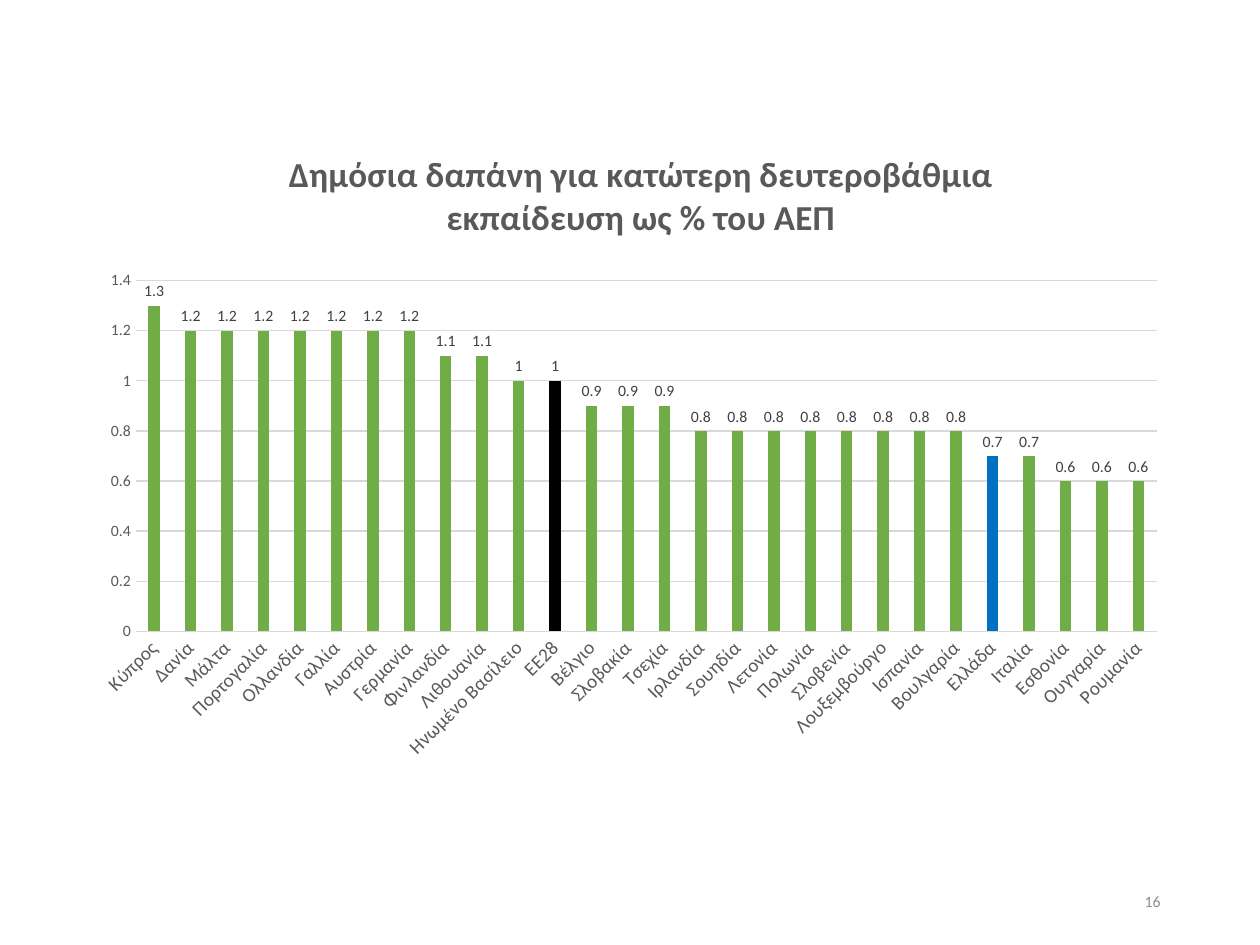
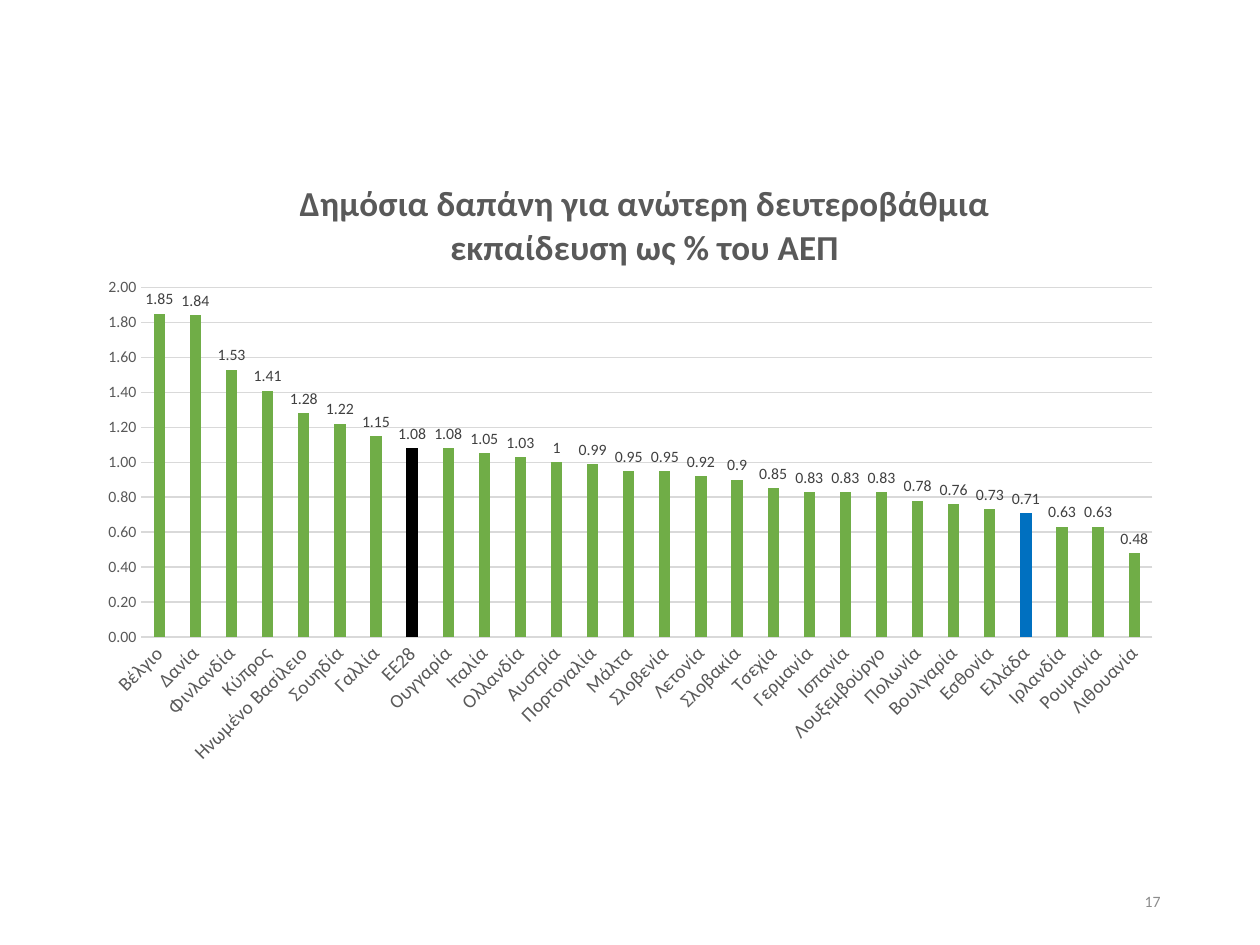
from lxml.etree import SubElement
from pptx import Presentation
from pptx.chart.data import CategoryChartData
from pptx.dml.color import RGBColor
from pptx.enum.chart import XL_CHART_TYPE, XL_LABEL_POSITION, XL_TICK_MARK
from pptx.enum.text import MSO_ANCHOR, PP_ALIGN
from pptx.oxml.ns import qn
from pptx.util import Pt

EMU_PER_PX = 914400 / 126
FONT = "Calibri"
COLORS = {
    "bar": "70AD47",
    "average": "000000",
    "greece": "0070C0",
    "text": "595959",
    "label": "404040",
    "line": "D9D9D9",
    "number": "8C8C8C",
}
# The average is spelled with Latin letters on one slide, Greek on the other
HIGHLIGHTS = {"EE28": "average", "ΕΕ28": "average", "Ελλάδα": "greece"}
NUMBER_BOX = (890, 876, 283, 50)

SLIDES = [
    {
        "title": "Δημόσια δαπάνη για κατώτερη δευτεροβάθμια εκπαίδευση ως % του ΑΕΠ",
        "number": "16",
        "box": (87, 116, 1086, 661),
        "title_at": (0.18, 0.04),
        "plot": (0.045, 0.249, 0.94, 0.531),
        "maximum": 1.4,
        "format": "General",
        "values": {
            "Κύπρος": 1.3, "Δανία": 1.2, "Μάλτα": 1.2, "Πορτογαλία": 1.2,
            "Ολλανδία": 1.2, "Γαλλία": 1.2, "Αυστρία": 1.2, "Γερμανία": 1.2,
            "Φινλανδία": 1.1, "Λιθουανία": 1.1, "Ηνωμένο Βασίλειο": 1, "EE28": 1,
            "Βέλγιο": 0.9, "Σλοβακία": 0.9, "Τσεχία": 0.9, "Ιρλανδία": 0.8,
            "Σουηδία": 0.8, "Λετονία": 0.8, "Πολωνία": 0.8, "Σλοβενία": 0.8,
            "Λουξεμβούργο": 0.8, "Ισπανία": 0.8, "Βουλγαρία": 0.8, "Ελλάδα": 0.7,
            "Ιταλία": 0.7, "Εσθονία": 0.6, "Ουγγαρία": 0.6, "Ρουμανία": 0.6,
        },
    },
    {
        "title": "Δημόσια δαπάνη για ανώτερη δευτεροβάθμια εκπαίδευση ως % του ΑΕΠ",
        "number": "17",
        "box": (87, 147, 1086, 630),
        "title_at": (0.19, 0.04),
        "plot": (0.05, 0.223, 0.931, 0.555),
        "maximum": 2,
        "format": "0.00",
        "values": {
            "Βέλγιο": 1.85, "Δανία": 1.84, "Φινλανδία": 1.53, "Κύπρος": 1.41,
            "Ηνωμένο Βασίλειο": 1.28, "Σουηδία": 1.22, "Γαλλία": 1.15, "ΕΕ28": 1.08,
            "Ουγγαρία": 1.08, "Ιταλία": 1.05, "Ολλανδία": 1.03, "Αυστρία": 1,
            "Πορτογαλία": 0.99, "Μάλτα": 0.95, "Σλοβενία": 0.95, "Λετονία": 0.92,
            "Σλοβακία": 0.9, "Τσεχία": 0.85, "Γερμανία": 0.83, "Ισπανία": 0.83,
            "Λουξεμβούργο": 0.83, "Πολωνία": 0.78, "Βουλγαρία": 0.76, "Εσθονία": 0.73,
            "Ελλάδα": 0.71, "Ιρλανδία": 0.63, "Ρουμανία": 0.63, "Λιθουανία": 0.48,
        },
    },
]


def px(box):
    return [round(length * EMU_PER_PX) for length in box]


def color(name):
    return RGBColor.from_string(COLORS[name])


def set_font(font, size, color_name, bold=False):
    font.name = FONT
    font.size = Pt(size)
    font.bold = bold
    font.color.rgb = color(color_name)


def set_fill(fill, color_name):
    fill.solid()
    fill.fore_color.rgb = color(color_name)


def set_line(line, color_name):
    line.color.rgb = color(color_name)
    line.width = Pt(0.75)


def set_layout(element, index, fractions, inner=False):
    """Place a chart part by fractions of the chart's size."""
    for previous in element.findall(qn("c:layout")):
        element.remove(previous)
    layout = SubElement(element, qn("c:layout"))
    element.insert(index, layout)
    manual = SubElement(layout, qn("c:manualLayout"))
    settings = [("layoutTarget", "inner")] if inner else []
    settings += [("xMode", "edge"), ("yMode", "edge")]
    settings += zip("xywh", fractions)
    for tag, value in settings:
        SubElement(manual, qn(f"c:{tag}")).set("val", str(value))


def style_title(chart, content):
    chart.has_title = True
    paragraph = chart.chart_title.text_frame.paragraphs[0]
    run = paragraph.add_run()
    run.text = content["title"]
    set_font(run.font, 20, "text", bold=True)
    set_layout(chart.chart_title._element, 1, content["title_at"])


def style_axes(chart, content):
    categories, values = chart.category_axis, chart.value_axis
    for axis, size in ((categories, 11), (values, 9)):
        axis.major_tick_mark = axis.minor_tick_mark = XL_TICK_MARK.NONE
        set_font(axis.tick_labels.font, size, "text")
    categories.has_major_gridlines = False
    set_line(categories.format.line, "line")
    # Slanted country names
    body = categories._element.find(qn("c:txPr")).find(qn("a:bodyPr"))
    body.set("rot", "-2700000")
    body.set("vert", "horz")

    values.minimum_scale = 0
    values.maximum_scale = content["maximum"]
    values.major_unit = 0.2
    values.format.line.fill.background()
    set_line(values.major_gridlines.format.line, "line")
    values.tick_labels.number_format = content["format"]
    values.tick_labels.number_format_is_linked = False


def style_bars(plot, countries):
    plot.gap_width = 219
    plot.overlap = -27
    plot.vary_by_categories = False
    series = plot.series[0]
    set_fill(series.format.fill, "bar")
    for index, country in enumerate(countries):
        if country in HIGHLIGHTS:
            set_fill(series.points[index].format.fill, HIGHLIGHTS[country])
    labels = series.data_labels
    labels.show_value = True
    labels.position = XL_LABEL_POSITION.OUTSIDE_END
    labels.number_format = "General"
    labels.number_format_is_linked = False
    set_font(labels.font, 9, "label")


def add_spending_chart(slide, content, box):
    data = CategoryChartData()
    data.categories = list(content["values"])
    data.add_series("Series 1", list(content["values"].values()))
    frame = slide.shapes.add_chart(XL_CHART_TYPE.COLUMN_CLUSTERED, *px(box), data)
    chart = frame.chart
    chart.has_legend = False
    chart.font.name = FONT
    chart.font.size = Pt(10)
    style_title(chart, content)
    style_axes(chart, content)
    style_bars(chart.plots[0], content["values"])
    plot_area = chart._chartSpace.chart.plotArea
    set_layout(plot_area, 0, content["plot"], inner=True)


def add_slide_number(slide, number, box):
    text_frame = slide.shapes.add_textbox(*px(box)).text_frame
    text_frame.word_wrap = True
    text_frame.vertical_anchor = MSO_ANCHOR.MIDDLE
    paragraph = text_frame.paragraphs[0]
    paragraph.alignment = PP_ALIGN.RIGHT
    run = paragraph.add_run()
    run.text = number
    set_font(run.font, 9, "number")


def main():
    presentation = Presentation()
    presentation.slide_width, presentation.slide_height = px((1260, 945))
    for content in SLIDES:
        slide = presentation.slides.add_slide(presentation.slide_layouts[6])
        add_spending_chart(slide, content, content["box"])
        add_slide_number(slide, content["number"], NUMBER_BOX)
    presentation.save("out.pptx")


if __name__ == "__main__":
    main()
